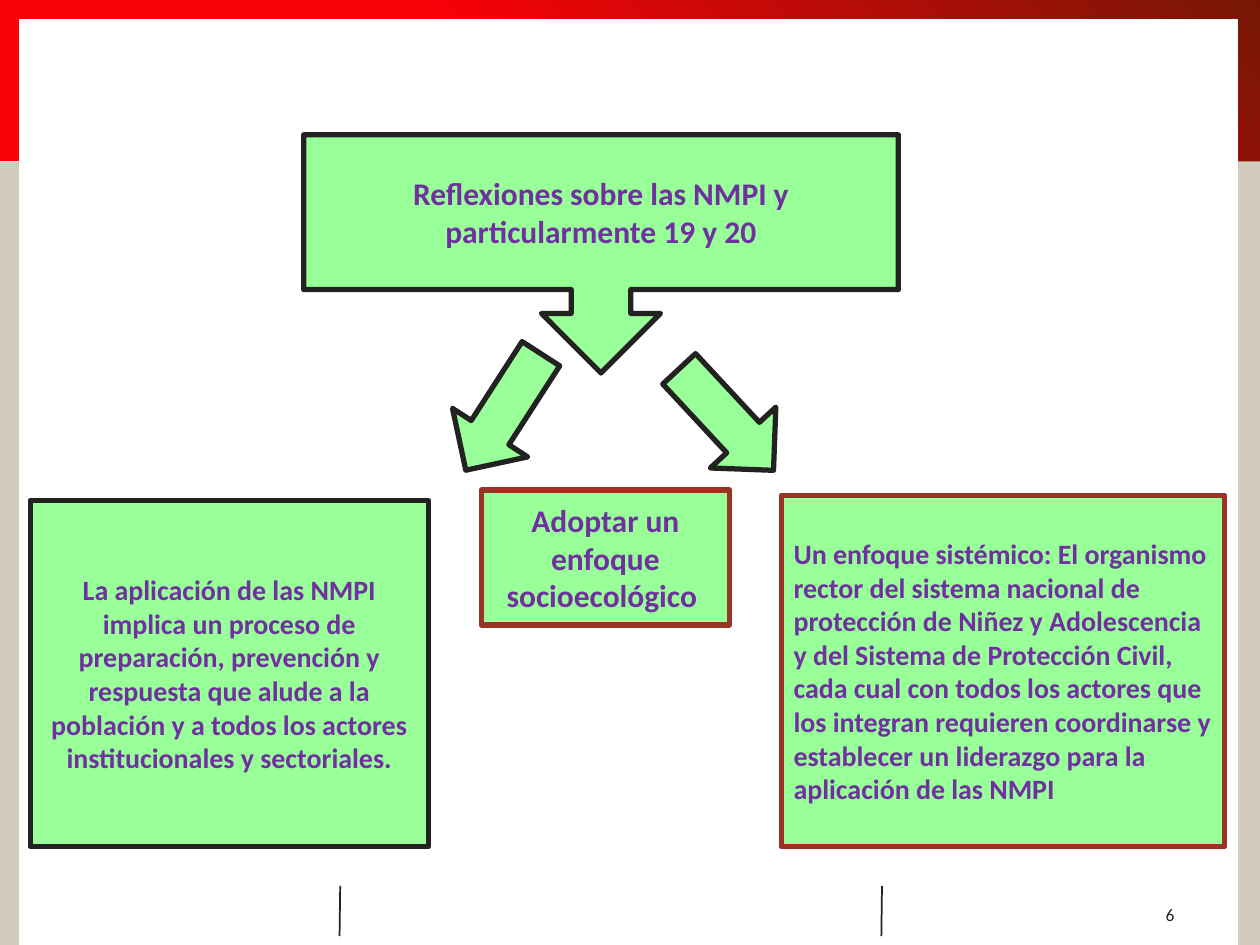
from lxml.etree import SubElement
from pptx import Presentation
from pptx.dml.color import RGBColor
from pptx.enum.shapes import MSO_CONNECTOR, MSO_SHAPE
from pptx.enum.text import MSO_ANCHOR, PP_ALIGN
from pptx.oxml.ns import qn
from pptx.util import Inches, Pt

WHITE = RGBColor(0xFF, 0xFF, 0xFF)
RED = RGBColor(0xFA, 0x00, 0x07)
DARK_RED = RGBColor(0x76, 0x17, 0x06)
BRICK = RGBColor(0x9A, 0x33, 0x24)
SAND = RGBColor(0xD1, 0xCC, 0xBD)
GREEN = RGBColor(0x99, 0xFF, 0x99)
PURPLE = RGBColor(0x70, 0x30, 0xA0)
INK = RGBColor(0x22, 0x22, 0x21)

COLUMNS, ROWS = 100, 75


class DiagramSlide:
    """Places elements on a grid of COLUMNS by ROWS square cells."""

    font_name = "Calibri"
    outline_width = 3

    def __init__(self, presentation):
        self.slide = presentation.slides.add_slide(presentation.slide_layouts[6])
        self.column = presentation.slide_width / COLUMNS
        self.row = presentation.slide_height / ROWS

    def place(self, left, top, width, height):
        return (round(left * self.column), round(top * self.row),
                round(width * self.column), round(height * self.row))

    def shape(self, kind, area, fill, line=None, line_width=outline_width):
        shape = self.slide.shapes.add_shape(kind, *self.place(*area))
        shape.shadow.inherit = False
        shape.fill.solid()
        shape.fill.fore_color.rgb = fill
        if line is None:
            shape.line.fill.background()
        else:
            shape.line.color.rgb = line
            shape.line.width = Pt(line_width)
        return shape

    def gradient_band(self, area, stops, angle):
        band = self.shape(MSO_SHAPE.RECTANGLE, area, RED)
        band.fill.gradient()
        band.fill.gradient_angle = angle
        for stop, (position, color) in zip(band.fill.gradient_stops, stops):
            stop.position = position
            stop.color.rgb = color

    def add_text(self, shape, text, size, color, align, bold=False):
        frame = shape.text_frame
        frame.word_wrap = True
        frame.vertical_anchor = MSO_ANCHOR.MIDDLE
        paragraph = frame.paragraphs[0]
        paragraph.alignment = align
        run = paragraph.add_run()
        run.text = text
        run.font.name = self.font_name
        run.font.size = Pt(size)
        run.font.bold = bold
        run.font.color.rgb = color

    def box(self, area, text, size, line=INK, align=PP_ALIGN.CENTER,
            kind=MSO_SHAPE.RECTANGLE):
        shape = self.shape(kind, area, GREEN, line)
        self.add_text(shape, text, size, PURPLE, align, bold=True)

    def arrow(self, area, rotation):
        self.shape(MSO_SHAPE.DOWN_ARROW, area, GREEN, INK).rotation = rotation

    def label(self, area, text, size, align):
        text_box = self.slide.shapes.add_textbox(*self.place(*area))
        self.add_text(text_box, text, size, INK, align)

    def line(self, start, end):
        connector = self.slide.shapes.add_connector(
            MSO_CONNECTOR.STRAIGHT, *self.place(*start, *end))
        connector.line.color.rgb = INK
        connector.line.width = Pt(1)
        SubElement(connector.element.spPr, qn("a:effectLst"))


def draw_frame(page):
    page.gradient_band((0, 0, COLUMNS, 12.8), [(0.4, RED), (1, DARK_RED)], 45)
    page.shape(MSO_SHAPE.RECTANGLE, (0, 12.8, COLUMNS, ROWS - 12.8), SAND)
    page.shape(MSO_SHAPE.RECTANGLE, (1.6, 1.6, 96.6, ROWS - 1.6),
               WHITE, WHITE, line_width=0.75)
    for column in (27, 70):
        page.line((column, 70.3), (column - 0.05, 74.3))
    page.label((88.1, 70.7, 6.1, 3.8), "6", 10, PP_ALIGN.RIGHT)


def draw_diagram(page):
    page.box((24.1, 10.7, 47.2, 18.9),
             "Reflexiones sobre las NMPI y particularmente 19 y 20",
             18, kind=MSO_SHAPE.DOWN_ARROW_CALLOUT)
    page.arrow((36.4, 27.2, 7.1, 11), 32.8)
    page.arrow((54.1, 27.8, 7.1, 11), 317.1)
    page.box((2.4, 39.7, 31.6, 27.5),
             "La aplicación de las NMPI implica un proceso de preparación, "
             "prevención y respuesta que alude a la población y a todos los "
             "actores institucionales y sectoriales.", 16)
    page.box((62, 39.3, 35.2, 27.9),
             "Un enfoque sistémico: El organismo rector del sistema nacional de "
             "protección de Niñez y Adolescencia y del Sistema de Protección "
             "Civil, cada cual con todos los actores que los integran requieren "
             "coordinarse y establecer un liderazgo para la aplicación de las "
             "NMPI", 16, BRICK, PP_ALIGN.LEFT)
    page.box((38.2, 38.9, 19.7, 10.7),
             "Adoptar un enfoque socioecológico ", 18, BRICK)


def main():
    presentation = Presentation()
    presentation.slide_width = Inches(10)
    presentation.slide_height = Inches(7.5)
    page = DiagramSlide(presentation)
    draw_frame(page)
    draw_diagram(page)
    presentation.save("out.pptx")


if __name__ == "__main__":
    main()
